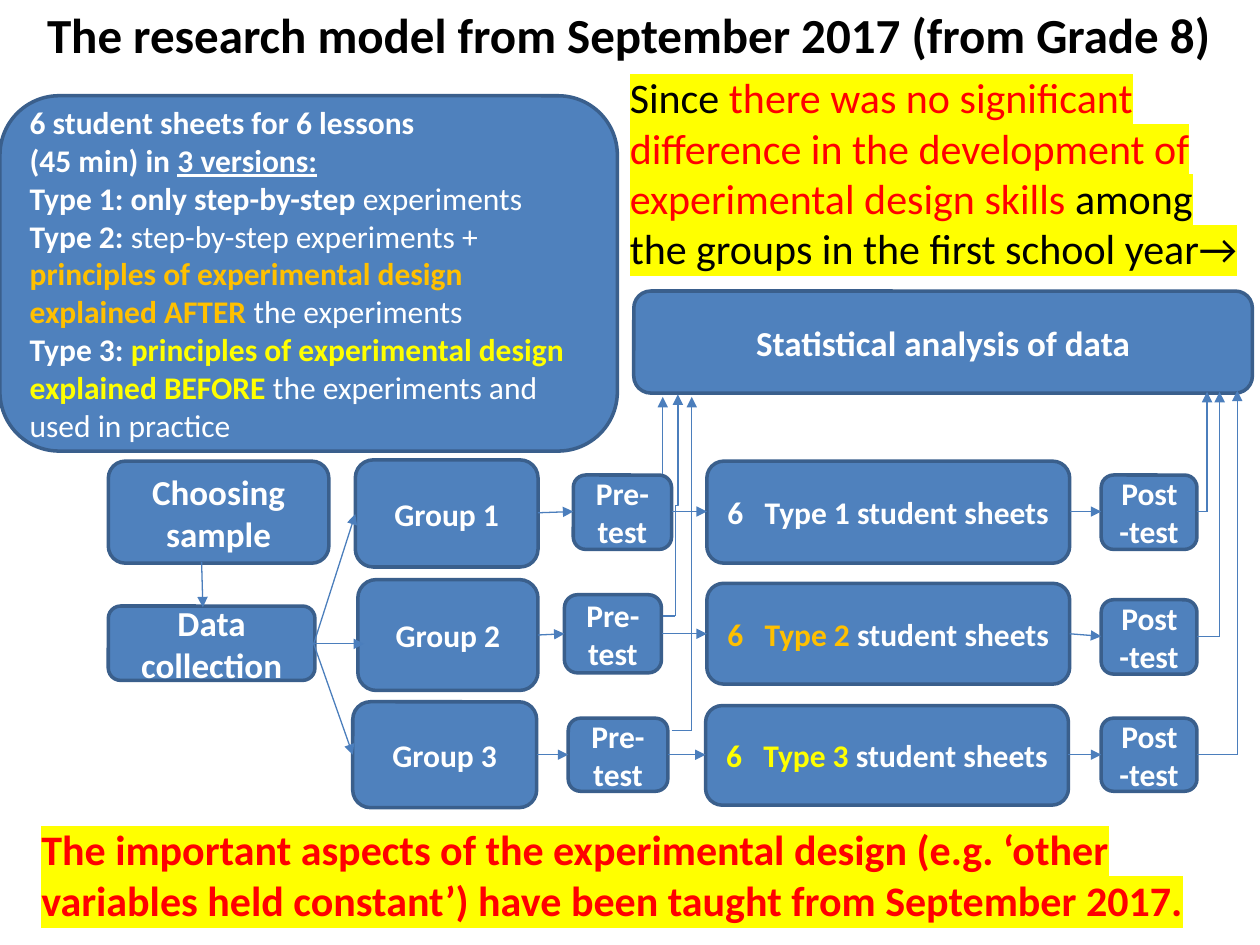
from lxml import etree
from pptx import Presentation
from pptx import util as u
from pptx.dml.color import RGBColor
from pptx.enum import shapes, text
from pptx.oxml.ns import qn

PX = 9144  # 100 px to the inch
WHITE, BLACK, RED = "FFFFFF", "000000", "FF0000"
YELLOW, ORANGE = "FFFF00", "FFC000"
BLUE, EDGE, ARROW = "4F81BD", "3A5F8C", "4B7EBC"
CENTER, LEFT = text.PP_ALIGN.CENTER, text.PP_ALIGN.LEFT

prs = Presentation()
prs.slide_width, prs.slide_height = 1000 * PX, 750 * PX
s = prs.slides.add_slide(prs.slide_layouts[6])


def write(sp, paragraphs, size, align=CENTER, anchor="MIDDLE", highlight=None):
    """Fill a shape with paragraphs of (text, colour, bold, underline) runs."""
    tf = sp.text_frame
    tf.word_wrap = True
    tf.vertical_anchor = text.MSO_ANCHOR[anchor]
    for i, runs in enumerate(paragraphs):
        p = tf.paragraphs[0] if i == 0 else tf.add_paragraph()
        p.alignment = align
        for words, color, bold, underline in runs:
            r = p.add_run()
            r.text = words
            r.font.size, r.font.bold = u.Pt(size), bold
            r.font.underline = underline
            r.font.color.rgb = RGBColor.from_string(color)
            if highlight:
                mark = etree.Element(qn("a:highlight"))
                etree.SubElement(mark, qn("a:srgbClr")).set("val", highlight)
                r.font._element.find(qn("a:solidFill")).addnext(mark)
            r.font.name = "Calibri"


def line(x1, y1, x2, y2, head=True, kind="STRAIGHT"):
    c = s.shapes.add_connector(shapes.MSO_CONNECTOR[kind],
                               x1 * PX, y1 * PX, x2 * PX, y2 * PX)
    c.line.color.rgb = RGBColor.from_string(ARROW)
    c.line.width = u.Pt(0.75)
    if head:
        etree.SubElement(c.line._get_or_add_ln(), qn("a:tailEnd")).set("type", "triangle")
    etree.SubElement(c._element.spPr, qn("a:effectLst"))
    return c


title = [("The research model from September 2017 (from Grade 8) ", BLACK, True, False)]
sheets = [
    [("6 student sheets for 6 lessons", WHITE, True, False)],
    [("(45 min) in ", WHITE, True, False), ("3 versions:", WHITE, True, True)],
    [("Type 1: only step-by-step", WHITE, True, False),
     (" experiments", WHITE, False, False)],
    [("Type 2: ", WHITE, True, False),
     ("step-by-step experiments + ", WHITE, False, False),
     ("principles of experimental design explained AFTER ", ORANGE, True, False),
     ("the experiments", WHITE, False, False)],
    [("Type 3: ", WHITE, True, False),
     ("principles of experimental design explained BEFORE ", YELLOW, True, False),
     ("the experiments and used in practice", WHITE, False, False)],
]
reason = [
    ("Since ", BLACK, False, False),
    ("there was no significant difference in the development of "
     "experimental design skills ", RED, False, False),
    ("among the groups in the first school year→", BLACK, False, False),
]
conclusion = [("The important aspects of the experimental design (e.g. ‘other variables "
               "held constant’) have been taught from September 2017.", RED, True, False)]

# Boxes: position, paragraphs, text size, alignment
boxes = [((0, 76, 490, 282), sheets, 18, LEFT)]
for at, label in [
    ((86, 366, 175, 81), "Choosing sample"),
    ((86, 481, 164, 59), "Data collection"),
    ((503, 231, 491, 81), "Statistical analysis of data"),
]:
    boxes.append((at, [[(label, WHITE, True, False)]], 20, CENTER))

# One row per group: group, pre-test, sheets and post-test boxes
rows = [
    (WHITE, (282, 365, 145, 85), (455, 377, 78, 59), (561, 366, 288, 81), (874, 377, 76, 59)),
    (ORANGE, (284, 460, 143, 88), (448, 472, 77, 62), (561, 463, 288, 80), (874, 476, 76, 59)),
    (YELLOW, (280, 557, 146, 84), (451, 570, 79, 58), (560, 560, 288, 79), (874, 570, 76, 58)),
]
for n, (color, *places) in enumerate(rows, 1):
    labels = [
        [(f"Group {n}", WHITE, True, False)],
        [("Pre-test", WHITE, True, False)],
        [(f"6   Type {n} ", color, True, False), ("student sheets", WHITE, True, False)],
        [("Post-test", WHITE, True, False)],
    ]
    boxes += [(at, [runs], 18, CENTER) for at, runs in zip(places, labels)]

for at, paragraphs, size, align in boxes:
    sp = s.shapes.add_shape(shapes.MSO_SHAPE.ROUNDED_RECTANGLE, *[v * PX for v in at])
    sp.shadow.inherit = False
    sp.fill.solid()
    sp.fill.fore_color.rgb = RGBColor.from_string(BLUE)
    sp.line.color.rgb = RGBColor.from_string(EDGE)
    sp.line.width = u.Pt(2)
    write(sp, paragraphs, size, align)

# Arrows along each row, from box to box
for color, *places in rows:
    for (x, y, w, h), (x2, y2, w2, h2) in zip(places, places[1:]):
        line(x + w, y + h // 2, x2, y2 + h2 // 2)

# Sample to data collection, then out to the groups
line(160, 446, 161, 482)
for x, y in [(282, 408), (289, 511), (280, 599)]:
    line(249, 511, x, y)

# Pre-tests up to the analysis
line(526, 376, 526, 315)
line(526, 489, 536, 489, head=False)
elbow = line(449, 400, 625, 402, kind="ELBOW")
elbow._element.spPr.find(qn("a:xfrm")).set("rot", str(270 * 60000))
line(533, 580, 549, 580, head=False)
line(549, 580, 549, 315)

# Post-tests up to the analysis
for x, y, top in [(958, 406, 311), (968, 505, 311), (982, 599, 310)]:
    line(950, y, x, y, head=False)
    line(x, y, x, top)

for at, runs, size, align, anchor, highlight in [
    ((19, -3, 968, 60), title, 28, CENTER, "MIDDLE", None),
    ((23, 649, 933, 91), conclusion, 24, LEFT, "TOP", YELLOW),
    ((490, 52, 510, 172), reason, 24, LEFT, "TOP", YELLOW),
]:
    sp = s.shapes.add_textbox(*[v * PX for v in at])
    write(sp, [runs], size, align, anchor, highlight)

prs.save("out.pptx")
